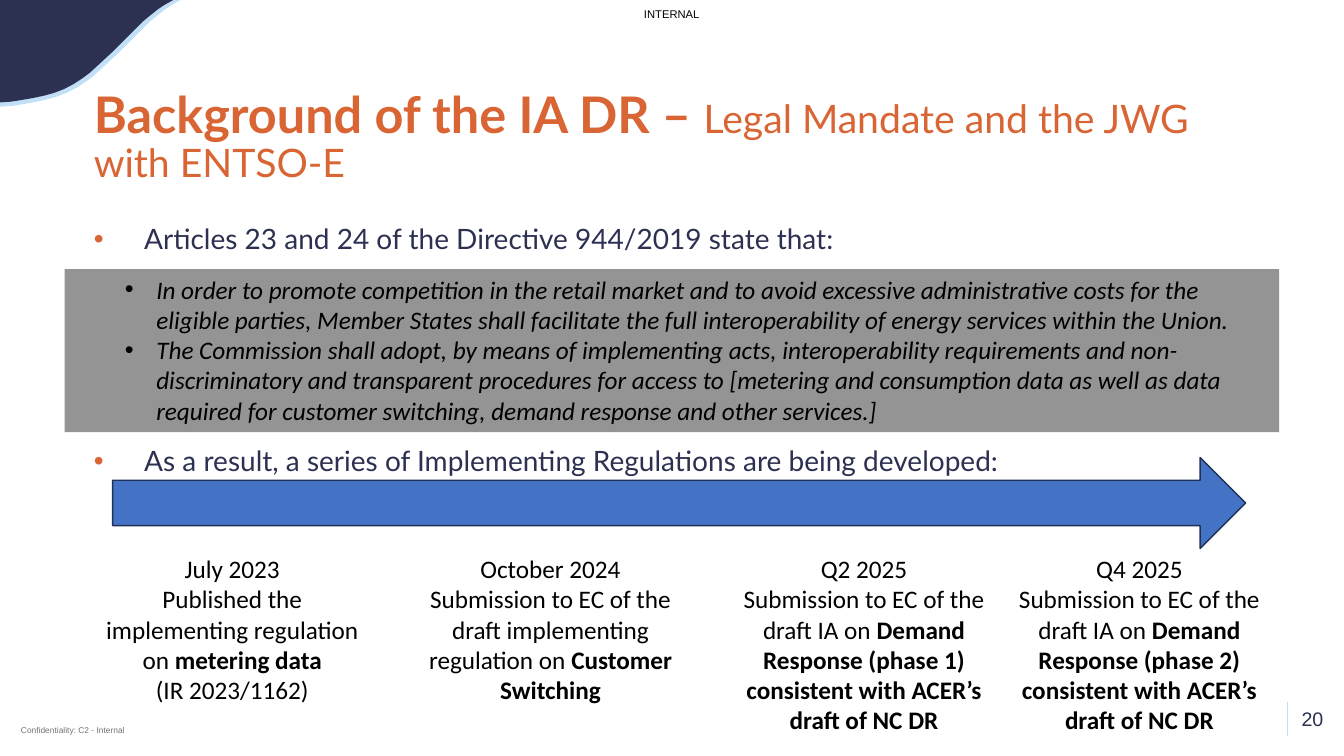
from lxml import etree
from pptx import Presentation
from pptx.dml.color import RGBColor
from pptx.enum.shapes import MSO_CONNECTOR, MSO_SHAPE
from pptx.enum.text import MSO_ANCHOR, MSO_AUTO_SIZE, PP_ALIGN
from pptx.oxml.ns import qn
from pptx.util import Cm, Pt

LEFT, CENTER, RIGHT = PP_ALIGN.LEFT, PP_ALIGN.CENTER, PP_ALIGN.RIGHT
NAVY, SKY, ORANGE, BLACK = "2C3051", "C1E0F7", "D86533", "000000"

TITLE = [("Background of the IA DR – ", 36, True),
         ("Legal Mandate and the JWG with ENTSO-E", 28, False)]
POINTS = ["Articles 23 and 24 of the Directive 944/2019 state that:",
          "As a result, a series of Implementing Regulations are being developed:"]
QUOTES = [
    "In order to promote competition in the retail market and to avoid excessive "
    "administrative costs for the eligible parties, Member States shall facilitate "
    "the full interoperability of energy services within the Union.",
    "The Commission shall adopt, by means of implementing acts, interoperability "
    "requirements and non-discriminatory and transparent procedures for access to "
    "[metering and consumption data as well as data required for customer switching, "
    "demand response and other services.]",
]
# left, height, paragraphs made of (text, bold) runs
MILESTONES = [
    (2.11, 4.11, [[("July 2023", False)],
                  [("Published the implementing regulation on ", False),
                   ("metering data", True)],
                  [("(IR 2023/1162)", False)]]),
    (10.13, 4.11, [[("October 2024", False)],
                   [("Submission to EC of the draft implementing regulation on ", False),
                    ("Customer Switching", True)]]),
] + [
    (left, 4.88, [[(quarter, False)],
                  [("Submission to EC of the draft IA on ", False),
                   (f"Demand Response (phase {phase}) consistent with "
                    "ACER’s draft of NC DR", True)]])
    for left, quarter, phase in [(18.03, "Q2 2025", 1), (24.97, "Q4 2025", 2)]
]
# text, left, top, width, height, size, colour, alignment, margin
LABELS = [
    ("INTERNAL", 16.23, 0.18, 1.47, 0.33, 8, BLACK, LEFT, 0),
    ("Confidentiality: C2 - Internal", 0.53, 18.26, 2.75, 0.25, 6, "737373", LEFT, 0),
    ("20", 32.41, 17.68, 1.19, 0.86, 14, NAVY, RIGHT, 0.25),
]
WAVE = [(0, 0), (0, 2.69), (0.3, 2.67), (0.61, 2.62), (0.89, 2.57), (1.17, 2.51),
        (1.42, 2.44), (1.68, 2.34), (1.93, 2.21), (2.16, 2.06), (2.36, 1.91),
        (2.59, 1.7), (3, 1.32), (3.56, 0.76), (3.76, 0.56), (3.94, 0.41),
        (4.14, 0.25), (4.32, 0.13), (4.55, 0)]
WAVE_LAYERS = [(1, SKY), (0.96, NAVY)]


def rgb(value):
    return RGBColor.from_string(value)


def box(*lengths):
    return [Cm(v) for v in lengths]


def place(sp, *lengths):
    sp.left, sp.top, sp.width, sp.height = box(*lengths)


def style(r, size, color, font, bold=False, italic=False):
    f = r.font
    f.size, f.name, f.bold, f.italic = Pt(size), font, bold, italic
    f.color.rgb = rgb(color)


def bullet(p, margin, hanging, color):
    pPr = p._p.get_or_add_pPr()
    pPr.set("marL", str(Cm(margin)))
    pPr.set("indent", str(-Cm(hanging)))
    clr = etree.SubElement(pPr, qn("a:buClr"))
    etree.SubElement(clr, qn("a:srgbClr"), val=color)
    etree.SubElement(pPr, qn("a:buFont"), typeface="Arial")
    etree.SubElement(pPr, qn("a:buChar"), char="•")


def paint(sp, fill, line=None):
    sp.shadow.inherit = False
    sp.fill.solid()
    sp.fill.fore_color.rgb = rgb(fill)
    if line:
        sp.line.color.rgb = rgb(line)
        sp.line.width = Pt(1)
    else:
        sp.line.fill.background()


prs = Presentation()
prs.slide_width, prs.slide_height = box(33.87, 19.05)
s = prs.slides.add_slide(prs.slide_layouts[1])
title, body = s.placeholders

for scale, color in WAVE_LAYERS:
    start, *rest = [tuple(box(x * scale, y * scale)) for x, y in WAVE]
    builder = s.shapes.build_freeform(*start)
    builder.add_line_segments(rest, close=True)
    paint(builder.convert_to_shape(), color)

place(title, 2.11, 2.13, 29.77, 2.69)
tf = title.text_frame
tf.auto_size = MSO_AUTO_SIZE.NONE
tf.vertical_anchor = MSO_ANCHOR.MIDDLE
p = tf.paragraphs[0]
p.alignment, p.line_spacing = LEFT, 0.9
for text, size, bold in TITLE:
    r = p.add_run()
    r.text = text
    style(r, size, ORANGE, "Lato", bold)

place(body, 2.11, 5.56, 29.21, 9.42)
tf = body.text_frame
tf.auto_size = MSO_AUTO_SIZE.NONE
tf.text = "\n".join(POINTS)
for p, gap in zip(tf.paragraphs, (0, 137)):
    bullet(p, 1.27, 1.27, ORANGE)
    p.line_spacing, p.space_before = 0.9, Pt(gap)
    style(p.runs[0], 20, NAVY, "Lato")

quote = s.shapes.add_shape(MSO_SHAPE.RECTANGLE, *box(1.63, 6.78, 30.61, 4.11))
paint(quote, "949494")
tf = quote.text_frame
tf.vertical_anchor = MSO_ANCHOR.TOP
tf.text = "\n".join(QUOTES)
for p in tf.paragraphs:
    p.alignment = LEFT
    bullet(p, 2.06, 0.79, BLACK)
    style(p.runs[0], 18, BLACK, "Calibri", italic=True)

arrow = s.shapes.add_shape(MSO_SHAPE.RIGHT_ARROW, *box(2.84, 11.53, 28.55, 2.29))
paint(arrow, "4472C4", "1E3256")

for left, height, paragraphs in MILESTONES:
    tf = s.shapes.add_textbox(*box(left, 13.82, 7.49, height)).text_frame
    tf.word_wrap = True
    for i, runs in enumerate(paragraphs):
        p = tf.add_paragraph() if i else tf.paragraphs[0]
        p.alignment = CENTER
        for text, bold in runs:
            r = p.add_run()
            r.text = text
            style(r, 18, BLACK, "Calibri", bold)

for text, left, top, width, height, size, color, align, margin in LABELS:
    tf = s.shapes.add_textbox(*box(left, top, width, height)).text_frame
    tf.margin_left = tf.margin_right = Cm(margin)
    tf.margin_top = tf.margin_bottom = Cm(margin / 2)
    tf.text = text
    p = tf.paragraphs[0]
    p.alignment = align
    tf.word_wrap = align == RIGHT
    style(p.runs[0], size, color, "Arial")

rule = s.shapes.add_connector(MSO_CONNECTOR.STRAIGHT, *box(32.44, 17.68, 32.44, 18.54))
rule.line.color.rgb = rgb(SKY)
rule.line.width = Pt(0.5)
etree.SubElement(rule._element.spPr, qn("a:effectLst"))

prs.save("out.pptx")
